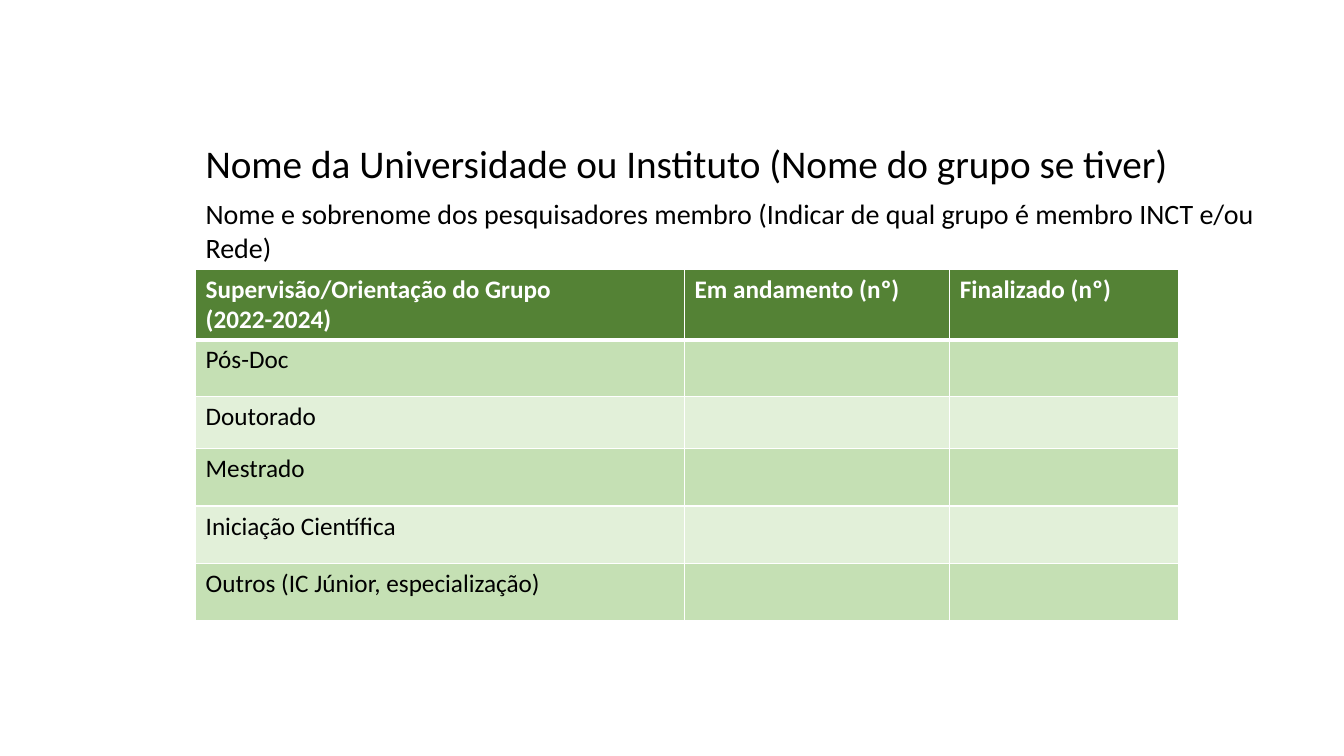
from dataclasses import dataclass

import lxml.etree
import pptx
import pptx.dml.color
import pptx.enum.text
import pptx.oxml.ns
import pptx.util

PX = 9144


@dataclass(frozen=True)
class Theme:
    font: str = "Calibri"
    title_size: int = 28
    members_size: int = 20
    table_size: int = 18
    ink: str = "000000"
    paper: str = "FFFFFF"
    header: str = "548235"
    bands: tuple = ("C5E0B4", "E2F0D9")
    thin: int = 1
    thick: int = 3


THEME = Theme()
HEADINGS = ("Supervisão/Orientação do Grupo\n(2022-2024)", "Em andamento (nº)", "Finalizado (nº)")
LEVELS = ("Pós-Doc", "Doutorado", "Mestrado", "Iniciação Científica", "Outros (IC Júnior, especialização)")
COLUMN_WIDTHS = (485, 263, 227)
ROW_HEIGHTS = (70, 56, 52, 57, 57, 57)


def px(length):
    return pptx.util.Emu(length * PX)


def rgb(color):
    return pptx.dml.color.RGBColor.from_string(color)


def write(frame, text, *, size, color=THEME.ink, bold=False):
    frame.text = text
    for paragraph in frame.paragraphs:
        paragraph.font.size = pptx.util.Pt(size)
        for run in paragraph.runs:
            run.font.name = THEME.font
            run.font.size = pptx.util.Pt(size)
            run.font.bold = bold
            run.font.color.rgb = rgb(color)


def add_heading(slide, box, text, size):
    heading = slide.shapes.add_textbox(*map(px, box))
    heading.text_frame.word_wrap = True
    heading.text_frame.auto_size = pptx.enum.text.MSO_AUTO_SIZE.SHAPE_TO_FIT_TEXT
    write(heading.text_frame, text, size=size)


def set_borders(cell, top, bottom):
    properties = cell._tc.get_or_add_tcPr()
    edges = (("lnL", THEME.thin), ("lnR", THEME.thin), ("lnT", top), ("lnB", bottom))
    for position, (edge, width) in enumerate(edges):
        line = lxml.etree.Element(pptx.oxml.ns.qn(f"a:{edge}"), w=str(pptx.util.Pt(width)))
        fill = lxml.etree.SubElement(line, pptx.oxml.ns.qn("a:solidFill"))
        lxml.etree.SubElement(fill, pptx.oxml.ns.qn("a:srgbClr"), val=THEME.paper)
        properties.insert(position, line)


def add_supervision_table(slide, box):
    rows = [HEADINGS] + [(level, "", "") for level in LEVELS]
    frame = slide.shapes.add_table(len(rows), len(HEADINGS), *map(px, box))
    supervision = frame.table
    for column, width in zip(supervision.columns, COLUMN_WIDTHS):
        column.width = px(width)
    for index, (row, height, labels) in enumerate(zip(supervision.rows, ROW_HEIGHTS, rows)):
        row.height = px(height)
        is_header = index == 0
        for cell, label in zip(row.cells, labels):
            cell.fill.solid()
            cell.fill.fore_color.rgb = rgb(THEME.header if is_header else THEME.bands[(index - 1) % 2])
            set_borders(
                cell,
                top=THEME.thick if index == 1 else THEME.thin,
                bottom=THEME.thick if is_header else THEME.thin,
            )
            write(
                cell.text_frame,
                label,
                size=THEME.table_size,
                color=THEME.paper if is_header else THEME.ink,
                bold=is_header,
            )


def build_group_slide(slide, box):
    left, top, width, height = box
    add_heading(
        slide,
        (left, top, width, 57),
        "Nome da Universidade ou Instituto (Nome do grupo se tiver)",
        THEME.title_size,
    )
    add_supervision_table(slide, (left, top + 134, sum(COLUMN_WIDTHS), height - 134))
    add_heading(
        slide,
        (left, top + 57, width - 32, 44),
        "Nome e sobrenome dos pesquisadores membro (Indicar de qual grupo é membro INCT e/ou Rede)",
        THEME.members_size,
    )


def main():
    presentation = pptx.Presentation()
    presentation.slide_width = px(1333)
    presentation.slide_height = px(750)
    slide = presentation.slides.add_slide(presentation.slide_layouts[6])
    build_group_slide(slide, (194, 133, 1161, 483))
    presentation.save("out.pptx")


if __name__ == "__main__":
    main()
